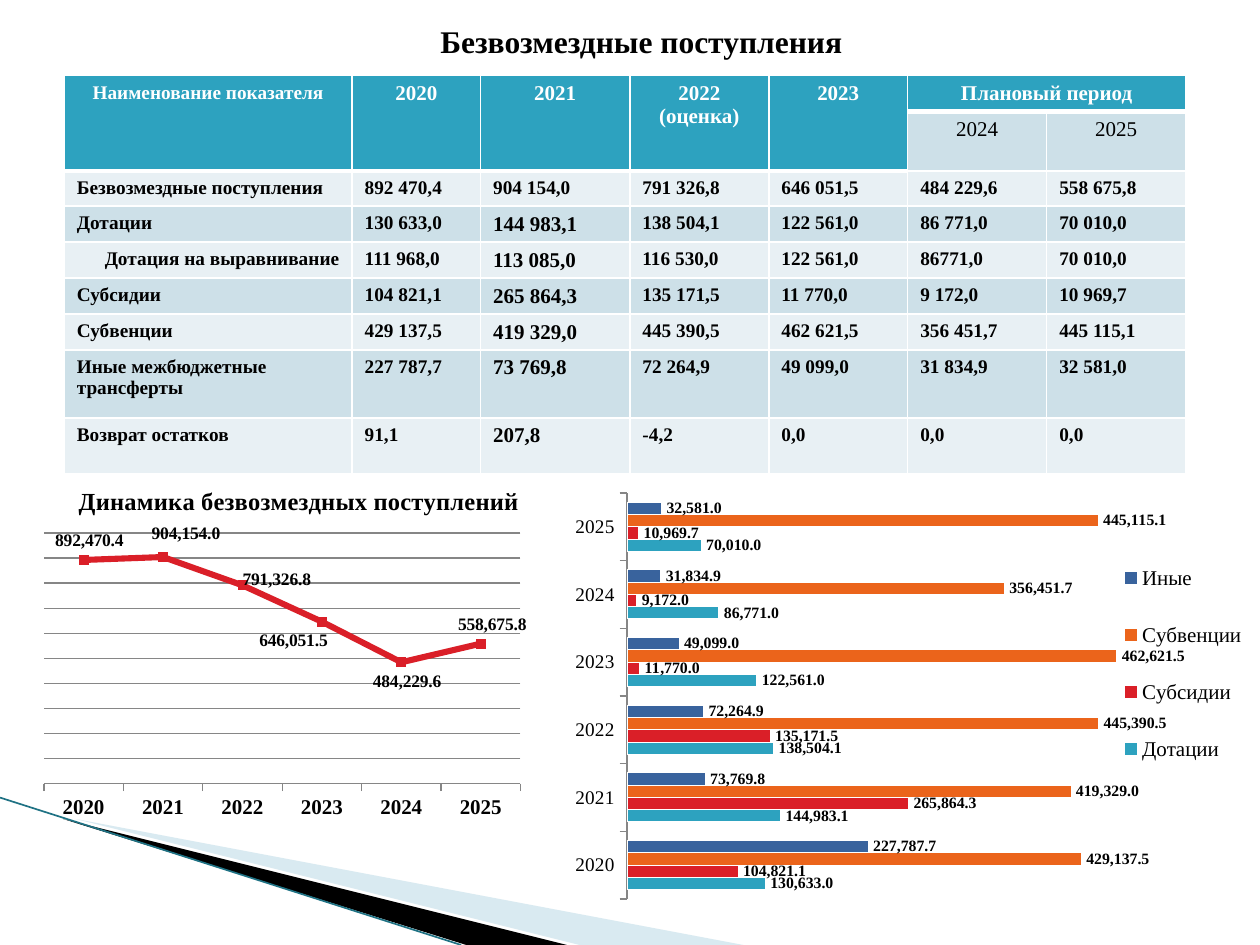
import dataclasses

import pptx
import pptx.chart.data
import pptx.dml.color
import pptx.enum.chart
import pptx.enum.shapes
import pptx.enum.text
import pptx.oxml
import pptx.oxml.ns
import pptx.util

ALIGN = pptx.enum.text.PP_ALIGN
LABEL = pptx.enum.chart.XL_LABEL_POSITION
CHART = pptx.enum.chart.XL_CHART_TYPE
qn = pptx.oxml.ns.qn
NS = pptx.oxml.ns.nsdecls

# Content
YEARS = ["2020", "2021", "2022", "2023", "2024", "2025"]
HEADINGS = ["Наименование показателя", "2020", "2021", "2022 (оценка)", "2023", "Плановый период", ""]
PLAN_YEARS = [""] * 5 + YEARS[4:]
INDICATORS = [
    ["Безвозмездные поступления", "892 470,4", "904 154,0", "791 326,8", "646 051,5", "484 229,6", "558 675,8"],
    ["Дотации", "130 633,0", "144 983,1", "138 504,1", "122 561,0", "86 771,0", "70 010,0"],
    ["Дотация на выравнивание", "111 968,0", "113 085,0", "116 530,0", "122 561,0", "86771,0", "70 010,0"],
    ["Субсидии", "104 821,1", "265 864,3", "135 171,5", "11 770,0", "9 172,0", "10 969,7"],
    ["Субвенции", "429 137,5", "419 329,0", "445 390,5", "462 621,5", "356 451,7", "445 115,1"],
    ["Иные межбюджетные трансферты", "227 787,7", "73 769,8", "72 264,9", "49 099,0", "31 834,9", "32 581,0"],
    ["Возврат остатков", "91,1", "207,8", "-4,2", "0,0", "0,0", "0,0"],
]


def amounts(row):
    return [float(text.replace(" ", "").replace(",", ".")) for text in INDICATORS[row][1:]]


@dataclasses.dataclass(frozen=True)
class Theme:
    font: str = "Times New Roman"
    ink: str = "000000"
    white: str = "FFFFFF"
    teal: str = "2DA2BF"
    red: str = "DA1F28"
    orange: str = "EB641B"
    blue: str = "39639D"
    band_dark: str = "CDE0E8"
    band_light: str = "E8F0F4"
    wedge: str = "A0CBDC"
    edge: str = "1F7284"
    grid: str = "868686"
    title: int = 18
    chart_title: int = 14
    large: int = 12
    body: int = 11
    point: int = 10
    bar: int = 9


def rgb(value):
    return pptx.dml.color.RGBColor.from_string(value)


def style(font, size, color, bold=False, name=Theme.font):
    font.name, font.size, font.bold = name, pptx.util.Pt(size), bold
    font.color.rgb = rgb(color)


def write(frame, text, size, color=Theme.ink, bold=True, align=None):
    paragraph = frame.paragraphs[0]
    paragraph.alignment = align
    run = paragraph.add_run()
    run.text = text
    style(run.font, size, color, bold)


def arrange(element, index, inner=False, offset=False, **shares):
    """Set a manual chart layout, in shares of the chart's size."""
    for old in element.findall(qn("c:layout")):
        element.remove(old)
    target = '<c:layoutTarget val="inner"/>' if inner else ""
    modes = "" if offset else '<c:xMode val="edge"/><c:yMode val="edge"/>'
    sizes = "".join(f'<c:{k} val="{shares[k]}"/>' for k in "xywh" if k in shares)
    element.insert(index, pptx.oxml.parse_xml(
        f'<c:layout {NS("c")}><c:manualLayout>{target}{modes}{sizes}</c:manualLayout></c:layout>'))


class Page:
    """Slide on a grid of 100 columns and 75 rows."""

    def __init__(self, deck, theme):
        self.theme = theme
        self.cell = deck.slide_width // 100
        self.slide = deck.slides.add_slide(deck.slide_layouts[5])
        self.shapes = self.slide.shapes

    def grid(self, *lengths):
        return [round(length * self.cell) for length in lengths]

    def title(self, text, *box):
        heading = self.shapes.title
        heading.left, heading.top, heading.width, heading.height = self.grid(*box)
        heading.text_frame.vertical_anchor = pptx.enum.text.MSO_ANCHOR.MIDDLE
        write(heading.text_frame, text, self.theme.title, align=ALIGN.CENTER)

    def wedge(self, points, color, alpha=None):
        builder = self.shapes.build_freeform(*points[0], scale=self.cell)
        builder.add_line_segments(points[1:], close=True)
        wedge = builder.convert_to_shape()
        wedge.shadow.inherit = False
        wedge.line.fill.background()
        wedge.fill.solid()
        wedge.fill.fore_color.rgb = rgb(color)
        if alpha:
            wedge.fill._xPr.find(".//" + qn("a:srgbClr")).append(
                pptx.oxml.parse_xml(f'<a:alpha {NS("a")} val="{alpha * 1000}"/>'))

    def line(self, start, end, color, width):
        edge = self.shapes.add_connector(
            pptx.enum.shapes.MSO_CONNECTOR.STRAIGHT, *self.grid(*start, *end))
        edge.line.color.rgb, edge.line.width = rgb(color), pptx.util.Pt(width)
        edge._element.spPr.append(pptx.oxml.parse_xml(f'<a:effectLst {NS("a")}/>'))

    def paint(self, cell, color, bottom=1):
        cell.fill.solid()
        cell.fill.fore_color.rgb = rgb(color)
        for index, side in enumerate("LRTB"):
            width = pptx.util.Pt(bottom if side == "B" else 1)
            cell._tc.get_or_add_tcPr().insert(index, pptx.oxml.parse_xml(
                f'<a:ln{side} {NS("a")} w="{width}"><a:solidFill>'
                f'<a:srgbClr val="{self.theme.white}"/></a:solidFill></a:ln{side}>'))

    def table(self, left, top, columns, rows):
        t = self.theme
        table = self.shapes.add_table(
            len(rows), len(columns), *self.grid(left, top, sum(columns), sum(rows))).table
        for column, width in zip(table.columns, self.grid(*columns)):
            column.width = width
        for row, height in zip(table.rows, self.grid(*rows)):
            row.height = height
        for r, texts in enumerate([HEADINGS, PLAN_YEARS] + INDICATORS):
            for c, text in enumerate(texts):
                cell = table.cell(r, c)
                head = r == 0 or (r == 1 and c < 5)
                band = t.band_dark if r % 2 else t.band_light
                self.paint(cell, t.teal if head else band, bottom=3 if head else 1)
                large = (r < 2 and c > 0) or (r > 2 and c == 2)
                align = ALIGN.CENTER if r < 2 else ALIGN.RIGHT if (r, c) == (4, 0) else None
                if text:
                    write(cell.text_frame, text, t.large if large else t.body,
                          t.white if head else t.ink, bold=r != 1, align=align)
        for c in range(5):
            table.cell(0, c).merge(table.cell(1, c))
        table.cell(0, 5).merge(table.cell(0, 6))

    def chart(self, kind, box, series, plot, top_value, axis_size, axis_bold=False):
        t = self.theme
        data = pptx.chart.data.CategoryChartData(number_format="#,##0.0")
        data.categories = YEARS
        for name, values in series:
            data.add_series(name, values)
        chart = self.shapes.add_chart(kind, *self.grid(*box), data).chart
        style(chart.font, t.large, t.ink)
        chart.has_title = chart.has_legend = False
        chart.plots[0].vary_by_categories = False
        years, scale = chart.category_axis, chart.value_axis
        style(years.tick_labels.font, axis_size, t.ink, axis_bold)
        years.major_tick_mark = pptx.enum.chart.XL_TICK_MARK.OUTSIDE
        years.format.line.color.rgb, years.format.line.width = rgb(t.grid), pptx.util.Pt(0.75)
        scale.minimum_scale, scale.maximum_scale, scale.major_unit = 0, top_value, 100000
        scale.visible = scale.has_major_gridlines = False
        arrange(chart._chartSpace.chart.plotArea, 0, inner=True, **plot)
        return chart

    def bars(self, box, series):
        t = self.theme
        chart = self.chart(CHART.BAR_CLUSTERED, box, [s[:2] for s in series],
                           dict(x=0.095, y=0.025, w=0.757, h=0.975), 500000, t.body)
        plot = chart.plots[0]
        plot.gap_width, plot.overlap = 150, 0
        plot.has_data_labels = True
        labels = plot.data_labels
        labels.show_value, labels.position = True, LABEL.OUTSIDE_END
        labels.number_format, labels.number_format_is_linked = "#,##0.0", False
        style(labels.font, t.bar, t.ink, bold=True)
        for bar, (_, _, color) in zip(plot.series, series):
            bar.format.fill.solid()
            bar.format.fill.fore_color.rgb = rgb(color)
            bar.format.line.color.rgb = rgb(t.white)
        # Legend entries fall between the bar labels
        chart.has_legend = True
        chart.legend.position = pptx.enum.chart.XL_LEGEND_POSITION.RIGHT
        chart.legend.include_in_layout = False
        style(chart.legend.font, t.large, t.ink)
        arrange(chart.legend._element, 1, x=0.79, y=0.12, w=0.2, h=0.63)

    def trend(self, box, title, values, label_places):
        t = self.theme
        chart = self.chart(CHART.LINE_MARKERS, box, [("Всего", values)],
                           dict(x=0.077, y=0.137, w=0.835, h=0.567), 1000000,
                           t.large, axis_bold=True)
        chart.has_title = True
        write(chart.chart_title.text_frame, title, t.chart_title)
        arrange(chart.chart_title._element, 1, x=0.13, y=0.02)
        chart.value_axis.has_major_gridlines = True
        chart.value_axis.major_gridlines.format.line.color.rgb = rgb(t.grid)
        total = chart.plots[0].series[0]
        total.smooth = False
        total.format.line.color.rgb, total.format.line.width = rgb(t.red), pptx.util.Pt(3.5)
        total.marker.style, total.marker.size = pptx.enum.chart.XL_MARKER_STYLE.SQUARE, 5
        total.marker.format.fill.solid()
        total.marker.format.fill.fore_color.rgb = rgb(t.red)
        total.marker.format.line.color.rgb = rgb(t.red)
        for index, (position, dx, dy) in enumerate(label_places):
            label = total.points[index].data_label
            style(label.font, t.point, t.ink, bold=True)
            label.position = position
            arrange(label._get_or_add_dLbl(), 1, offset=True, x=dx, y=dy)
        for leader in total._element.iter(qn("c:showLeaderLines")):
            leader.set("val", "0")


def main():
    deck = pptx.Presentation()
    deck.slide_width, deck.slide_height = pptx.util.Inches(10), pptx.util.Inches(7.5)
    theme = Theme()
    page = Page(deck, theme)

    # Corner decoration
    page.wedge([(5.5, 65.1), (59.2, 75), (45.5, 75), (5.5, 65)], theme.wedge, alpha=40)
    page.wedge([(5.3, 64.9), (45.3, 75), (36.9, 75), (5.4, 65)], theme.ink)
    page.line((0, 63.3), (36.6, 75), theme.edge, 0.95)

    # Title and table
    page.title("Безвозмездные поступления", 5.9, 1.3, 90, 3.9)
    page.table(5.1, 6, [22.85, 10.2, 11.85] + [11.03] * 4,
               [2.8, 4.7, 2.8, 2.85, 2.85, 2.85, 2.85, 5.4, 4.4])

    # Charts
    page.bars((44.5, 38.3, 55.5, 33.1), [
        ("Дотации", amounts(1), theme.teal), ("Субсидии", amounts(3), theme.red),
        ("Субвенции", amounts(4), theme.orange), ("Иные", amounts(5), theme.blue)])
    page.trend((0, 37.5, 45.3, 35.1), "Динамика безвозмездных поступлений", amounts(0), [
        (LABEL.ABOVE, 0.01, 0), (LABEL.ABOVE, 0.04, -0.01), (LABEL.ABOVE, 0.06, 0.03),
        (LABEL.BELOW, -0.05, 0), (LABEL.BELOW, 0.01, 0), (LABEL.ABOVE, 0.02, 0)])

    deck.save("out.pptx")


if __name__ == "__main__":
    main()
